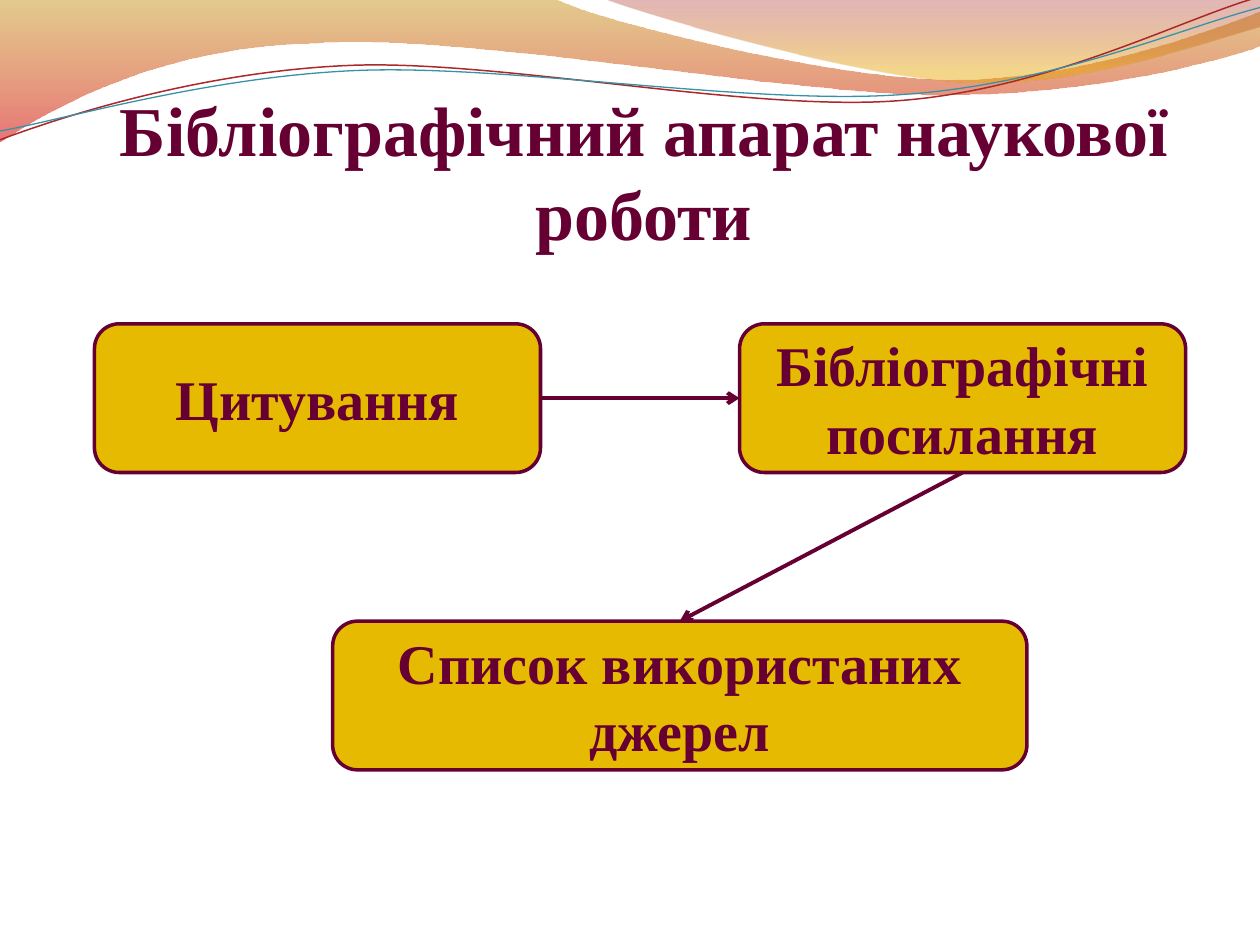
from lxml import etree
from pptx import Presentation, util as u
from pptx.dml.color import RGBColor
from pptx.enum import shapes, text
from pptx.oxml import parse_xml
from pptx.oxml.ns import nsdecls, qn

THEME = {
    "font": "Times New Roman", "ink": "660033", "box": "E6BA00",
    "title": 40, "label": 32, "outline": 2, "arrow": 2.25,
    "gold_red": [(0, "C38B00", 45), (100, "D60305", 55)],
    "red_gold": [(0, "A11112", 30), (80, "E9A600", 45)],
    "red_line": ("AC2829", 0.85), "teal_line": ("3891A7", 0.75),
}

deck = Presentation()
deck.slide_width, deck.slide_height = u.Inches(10), u.Inches(7.5)
page = deck.slides.add_slide(deck.slide_layouts[6])
CELL = deck.slide_width // 10  # grid of 10 columns by 7.5 rows


def write(box, words, size, anchor, insets=(0.1, 0.05, 0.1, 0.05)):
    """Put one centred bold paragraph into a box."""
    frame = box.text_frame
    frame.word_wrap = True
    frame.vertical_anchor = anchor
    (frame.margin_left, frame.margin_top,
     frame.margin_right, frame.margin_bottom) = [u.Inches(inset) for inset in insets]
    para = frame.paragraphs[0]
    para.alignment = text.PP_ALIGN.CENTER
    span = para.add_run()
    span.text = words
    span.font.name, span.font.size, span.font.bold = THEME["font"], u.Pt(size), True
    span.font.color.rgb = RGBColor.from_string(THEME["ink"])


def trace(pieces, closed):
    """Draw an outline of lines (one point each) and Bezier curves (three points)."""
    points = [(round(x * CELL), round(y * CELL))
              for piece in pieces for x, y in zip(piece[::2], piece[1::2])]
    builder = page.shapes.build_freeform(*points[0], scale=1.0)
    builder.add_line_segments(points[1:], close=closed)
    shape = builder.convert_to_shape()
    shape.shadow.inherit = False
    # Join each three-point run of line segments into one curve
    segments = iter(list(shape.element.iter(qn("a:lnTo"))))
    for piece in pieces[1:]:
        first = next(segments)
        if len(piece) == 6:
            curve = etree.Element(qn("a:cubicBezTo"))
            first.addprevious(curve)
            for segment in (first, next(segments), next(segments)):
                curve.append(segment[0])
                segment.getparent().remove(segment)
    return shape


# Shaded waves along the top
waves = [
    (THEME["gold_red"], [
        (0, 0), (4.4, -0.01), (4.76, 0.17, 6.64, 0.63, 7.58, 0.63),
        (8.53, 0.63, 9.58, 0.26, 10, 0.09), (10.01, 0.36),
        (9.83, 0.44, 8.7, 0.76, 7.46, 0.75), (6.22, 0.75, 3.82, 0.28, 2.57, 0.34),
        (1.29, 0.36, 0.46, 0.83, -0.01, 1.13), (0, 0)]),
    (THEME["red_gold"], [
        (4.79, -0.01), (5.09, 0.11, 6.82, 0.62, 7.69, 0.65),
        (8.56, 0.69, 9.61, 0.32, 10, 0.21), (10, 0), (4.79, -0.01)]),
]
for stops, pieces in waves:
    wave = trace(pieces, closed=True)
    wave.line.fill.background()
    stop_xml = "".join(
        f'<a:gs pos="{place * 1000}"><a:srgbClr val="{color}">'
        f'<a:alpha val="{alpha * 1000}"/></a:srgbClr></a:gs>'
        for place, color, alpha in stops)
    wave.element.spPr.find(qn("a:custGeom")).addnext(parse_xml(
        f'<a:gradFill {nsdecls("a")} rotWithShape="1"><a:gsLst>{stop_xml}</a:gsLst>'
        '<a:lin ang="5400000" scaled="0"/></a:gradFill>'))

# Thin lines across the waves
strands = [
    (THEME["red_line"], [
        (0, 1.11), (0.48, 0.93, 1.58, 0.57, 2.77, 0.52),
        (3.95, 0.47, 5.93, 0.89, 7.13, 0.8), (8.33, 0.71, 9.38, 0.15, 9.98, -0.02)]),
    (THEME["teal_line"], [
        (0, 1.04), (0.47, 0.96, 1.64, 0.61, 2.83, 0.56),
        (4.03, 0.51, 5.97, 0.84, 7.17, 0.75), (8.36, 0.67, 9.41, 0.21, 10, 0.06)]),
]
for (color, width), pieces in strands:
    strand = trace(pieces, closed=False)
    strand.fill.background()
    strand.line.color.rgb = RGBColor.from_string(color)
    strand.line.width = u.Pt(width)

# Title
title = page.shapes.add_textbox(*[round(CELL * n) for n in (0.5, 0.77, 9.22, 1.25)])
write(title, "Бібліографічний апарат наукової роботи", THEME["title"],
      text.MSO_ANCHOR.BOTTOM, insets=(0, 0.05, 0, 0))

# Boxes: the row gap equals the box height
TOP, HEIGHT = 2.57, 1.18
boxes = []
for words, left, row, width in [
    ("Цитування", 0.75, 0, 3.54),
    ("Бібліографічні посилання", 5.87, 0, 3.54),
    ("Список використаних джерел", 2.64, 1, 5.51),
]:
    box = page.shapes.add_shape(
        shapes.MSO_SHAPE.ROUNDED_RECTANGLE,
        *[round(CELL * n) for n in (left, TOP + row * 2 * HEIGHT, width, HEIGHT)])
    box.shadow.inherit = False
    box.fill.solid()
    box.fill.fore_color.rgb = RGBColor.from_string(THEME["box"])
    box.line.color.rgb = RGBColor.from_string(THEME["ink"])
    box.line.width = u.Pt(THEME["outline"])
    write(box, words, THEME["label"], text.MSO_ANCHOR.MIDDLE)
    boxes.append(box)

# Arrows from box to box
citation, references, sources = boxes
for start, start_side, end, end_side in [(citation, 3, references, 1),
                                         (references, 2, sources, 0)]:
    arrow = page.shapes.add_connector(shapes.MSO_CONNECTOR.STRAIGHT, 0, 0, 0, 0)
    arrow.begin_connect(start, start_side)
    arrow.end_connect(end, end_side)
    arrow.line.color.rgb = RGBColor.from_string(THEME["ink"])
    arrow.line.width = u.Pt(THEME["arrow"])
    outline = arrow.element.spPr.find(qn("a:ln"))
    etree.SubElement(outline, qn("a:tailEnd"), type="arrow")
    etree.SubElement(arrow.element.spPr, qn("a:effectLst"))

deck.save("out.pptx")
